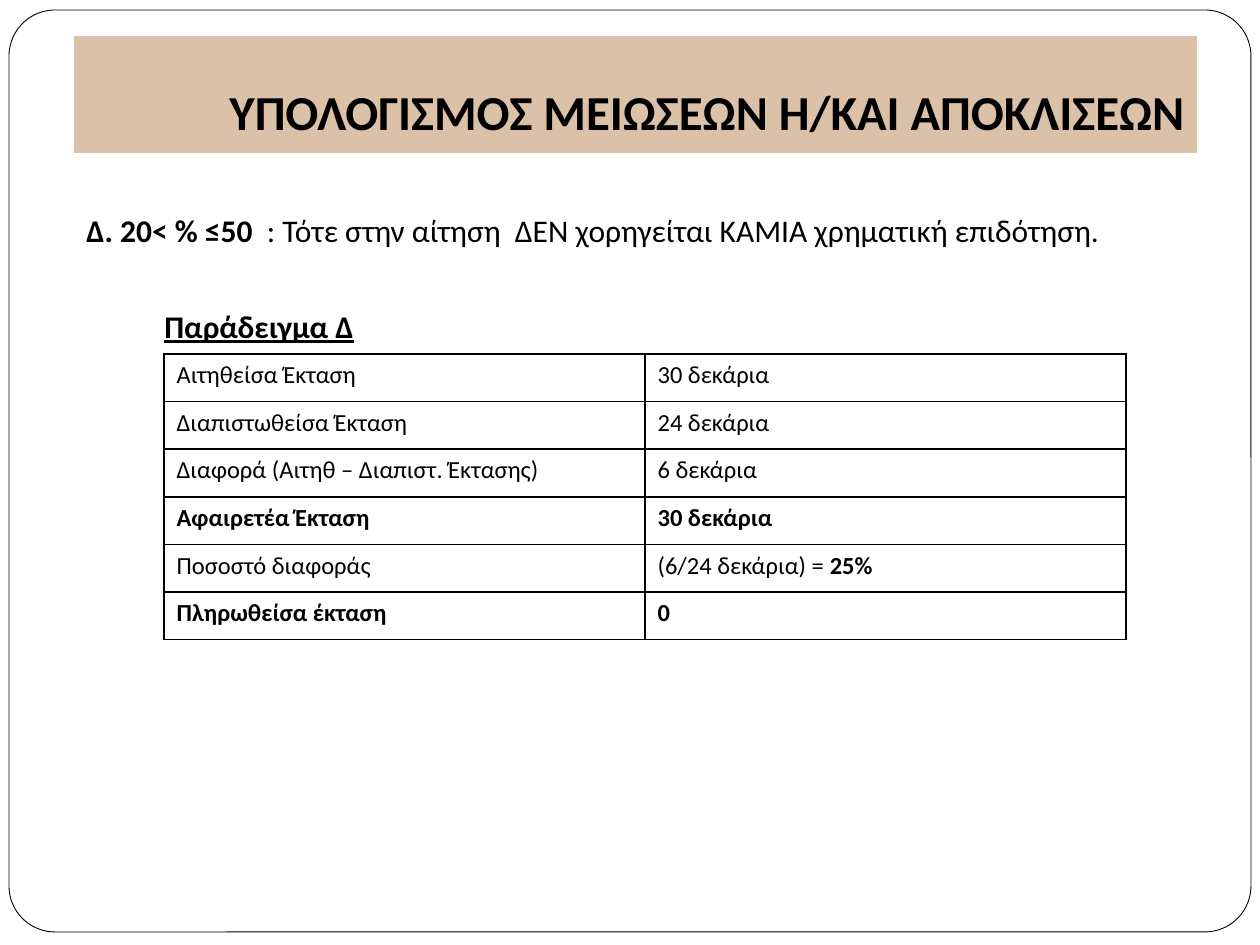
from dataclasses import dataclass

from lxml import etree
from pptx import Presentation, util as u
from pptx.dml.color import RGBColor
from pptx.enum import shapes, text
from pptx.oxml.ns import qn

EMU_PER_PX = 914400 / 126
COLORS = {"ink": "000000", "paper": "FFFFFF", "band": "DBC1A7"}
FONT = "Calibri"


@dataclass(frozen=True)
class Box:
    left: int
    top: int
    width: int
    height: int

    def emu(self) -> list[int]:
        return [px(n) for n in (self.left, self.top, self.width, self.height)]


@dataclass(frozen=True)
class Run:
    words: str
    bold: bool = False
    underline: bool = False


def px(length: int) -> u.Emu:
    return u.Emu(round(length * EMU_PER_PX))


def color(name: str) -> RGBColor:
    return RGBColor.from_string(COLORS[name])


def add_runs(paragraph, runs: list[Run], size: float) -> None:
    for item in runs:
        run = paragraph.add_run()
        run.text = item.words
        font = run.font
        font.name, font.size = FONT, u.Pt(size)
        font.bold, font.underline = item.bold, item.underline
        font.color.rgb = color("ink")


def add_panel(slide, kind, box: Box, fill: str):
    shape = slide.shapes.add_shape(kind, *box.emu())
    shape.shadow.inherit = False
    shape.fill.solid()
    shape.fill.fore_color.rgb = color(fill)
    shape.line.fill.background()
    return shape


def add_borders(cell) -> None:
    properties = cell._tc.get_or_add_tcPr()
    for index, side in enumerate(("a:lnL", "a:lnR", "a:lnT", "a:lnB")):
        line = etree.Element(qn(side), w=str(u.Pt(1)))
        fill = etree.SubElement(line, qn("a:solidFill"))
        etree.SubElement(fill, qn("a:srgbClr"), val=COLORS["ink"])
        properties.insert(index, line)


def add_grid(slide, box: Box, rows: list[list[list[Run]]]) -> None:
    table = slide.shapes.add_table(len(rows), len(rows[0]), *box.emu()).table
    table.first_row = table.horz_banding = False
    for row, contents in zip(table.rows, rows):
        for cell, runs in zip(row.cells, contents):
            cell.fill.background()
            add_borders(cell)
            add_runs(cell.text_frame.paragraphs[0], runs, 14)


AREA_ROWS = [
    [[Run("Αιτηθείσα Έκταση")], [Run("30 δεκάρια")]],
    [[Run("Διαπιστωθείσα Έκταση")], [Run("24 δεκάρια")]],
    [[Run("Διαφορά (Αιτηθ – Διαπιστ. Έκτασης)")], [Run("6 δεκάρια")]],
    [[Run("Αφαιρετέα Έκταση", True)], [Run("30 δεκάρια", True)]],
    [[Run("Ποσοστό διαφοράς")], [Run("(6/24 δεκάρια) = "), Run("25%", True)]],
    [[Run("Πληρωθείσα έκταση", True)], [Run("0", True)]],
]


def main() -> None:
    presentation = Presentation()
    presentation.slide_width, presentation.slide_height = px(1260), px(945)
    slide = presentation.slides.add_slide(presentation.slide_layouts[6])

    # Rounded page frame
    frame = add_panel(slide, shapes.MSO_SHAPE.ROUNDED_RECTANGLE,
                      Box(9, 10, 1242, 922), "paper")
    frame.adjustments[0] = 0.05
    frame.line.color.rgb = color("ink")
    frame.line.width = u.Pt(0.5)

    # Title band
    title = add_panel(slide, shapes.MSO_SHAPE.RECTANGLE,
                      Box(74, 36, 1123, 117), "band").text_frame
    title.word_wrap = True
    title.vertical_anchor = text.MSO_ANCHOR.BOTTOM
    title.margin_bottom = px(13)
    title.paragraphs[0].alignment = text.PP_ALIGN.RIGHT
    add_runs(title.paragraphs[0],
             [Run("ΥΠΟΛΟΓΙΣΜΟΣ ΜΕΙΩΣΕΩΝ Ή/ΚΑΙ ΑΠΟΚΛΙΣΕΩΝ", True)], 27.9)

    # Rule and example heading
    body = slide.shapes.add_textbox(*Box(74, 155, 1123, 507).emu()).text_frame
    body.word_wrap = True
    body.margin_top = px(56)
    add_runs(body.paragraphs[0], [
        Run("Δ. 20˂ % ≤50", True),
        Run("  : Τότε στην αίτηση  ΔΕΝ χορηγείται ΚΑΜΙΑ χρηματική επιδότηση."),
    ], 18)
    heading = body.add_paragraph()
    heading.space_before = u.Pt(33)
    heading._p.get_or_add_pPr().set("marL", str(px(78)))
    add_runs(heading, [Run("Παράδειγμα Δ", True, True)], 18)

    # Worked example
    add_grid(slide, Box(164, 354, 962, 286), AREA_ROWS)

    presentation.save("out.pptx")


if __name__ == "__main__":
    main()
